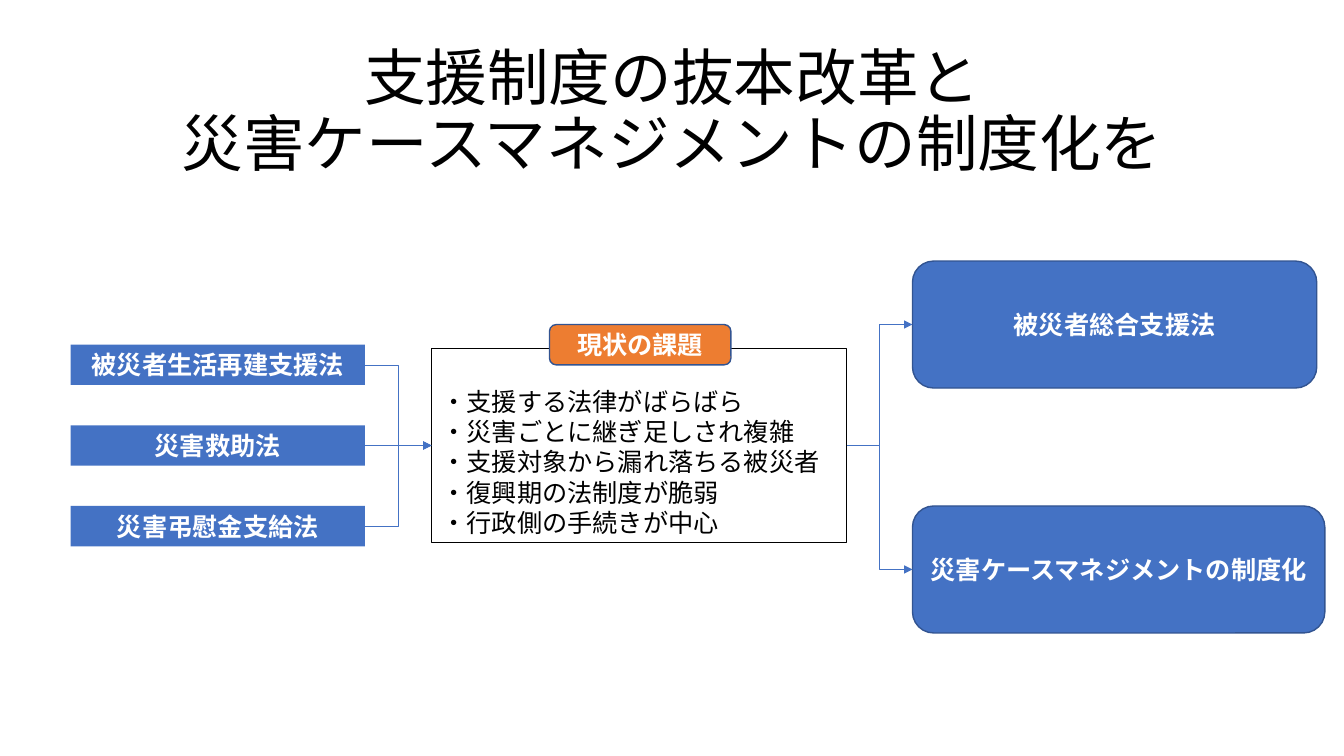
from lxml import etree
from pptx import Presentation
from pptx.dml.color import RGBColor
from pptx.enum.shapes import MSO_CONNECTOR, MSO_SHAPE
from pptx.enum.text import MSO_ANCHOR, MSO_AUTO_SIZE, PP_ALIGN
from pptx.oxml.ns import qn
from pptx.util import Inches, Pt

RECTANGLE = MSO_SHAPE.RECTANGLE
ROUNDED = MSO_SHAPE.ROUNDED_RECTANGLE
ELBOW = MSO_CONNECTOR.ELBOW
MIDDLE = MSO_ANCHOR.MIDDLE
BOTTOM = MSO_ANCHOR.BOTTOM
LEFT = PP_ALIGN.LEFT
CENTER = PP_ALIGN.CENTER
NO_AUTOFIT = MSO_AUTO_SIZE.NONE

FONT = "Noto Sans CJK JP"
BLUE, ORANGE, OUTLINE = "4472C4", "ED7D31", "325491"
BLACK, WHITE = "000000", "FFFFFF"

TITLE = "支援制度の抜本改革と\v災害ケースマネジメントの制度化を"
CURRENT_LAWS = ["被災者生活再建支援法", "災害救助法", "災害弔慰金支給法"]
ISSUES_HEADING = "現状の課題"
ISSUES = [
    "・支援する法律がばらばら",
    "・災害ごとに継ぎ足しされ複雑",
    "・支援対象から漏れ落ちる被災者",
    "・復興期の法制度が脆弱",
    "・行政側の手続きが中心",
]
REFORMS = [("被災者総合支援法", 2.59, 4.01), ("災害ケースマネジメントの制度化", 5.02, 4.09)]


def color(hex_string):
    return RGBColor.from_string(hex_string)


def format_text(text_frame, size, hex_string, bold=False, align=CENTER):
    for paragraph in text_frame.paragraphs:
        paragraph.alignment = align
        for run in paragraph.runs:
            run.font.size = Pt(size)
            run.font.bold = bold
            run.font.name = FONT
            run.font.color.rgb = color(hex_string)
            east_asian = etree.SubElement(run.font._element, qn("a:ea"))
            east_asian.set("typeface", FONT)


def add_box(slide, kind, box, fill=None, line=None, line_width=1):
    shape = slide.shapes.add_shape(kind, *map(Inches, box))
    shape.shadow.inherit = False
    if fill:
        shape.fill.solid()
        shape.fill.fore_color.rgb = color(fill)
    else:
        shape.fill.background()
    if line:
        shape.line.color.rgb = color(line)
        shape.line.width = Pt(line_width)
    else:
        shape.line.fill.background()
    return shape


def add_label(slide, kind, box, text, fill, line=None):
    shape = add_box(slide, kind, box, fill, line)
    text_frame = shape.text_frame
    text_frame.text = text
    text_frame.word_wrap = False
    text_frame.vertical_anchor = MIDDLE
    format_text(text_frame, 18, WHITE, bold=True)
    return shape


def add_arrow(slide, source, source_site, target, target_site):
    connector = slide.shapes.add_connector(ELBOW, 0, 0, 0, 0)
    connector.begin_connect(source, source_site)
    connector.end_connect(target, target_site)
    connector.line.color.rgb = color(BLUE)
    connector.line.width = Pt(0.5)
    etree.SubElement(connector.line._get_or_add_ln(), qn("a:tailEnd"), type="triangle")
    etree.SubElement(connector._element.spPr, qn("a:effectLst"))


def add_title(slide, box):
    title = slide.shapes.title
    title.left, title.top, title.width, title.height = map(Inches, box)
    text_frame = title.text_frame
    text_frame.text = TITLE
    text_frame.word_wrap = True
    text_frame.auto_size = NO_AUTOFIT
    text_frame.vertical_anchor = MIDDLE
    text_frame.paragraphs[0].line_spacing = 0.9
    format_text(text_frame, 44, BLACK)


def add_current_laws(slide, left, top, width, height, pitch):
    return [
        add_label(slide, RECTANGLE, (left, top + row * pitch, width, height), law, BLUE)
        for row, law in enumerate(CURRENT_LAWS)
    ]


def add_issues(slide, left, top, width, height):
    panel = add_box(slide, RECTANGLE, (left, top, width, height), line=BLACK, line_width=0.75)
    text_frame = panel.text_frame
    text_frame.text = "\n".join(ISSUES)
    text_frame.word_wrap = True
    text_frame.vertical_anchor = BOTTOM
    format_text(text_frame, 18, BLACK, align=LEFT)
    heading_box = (left + 1.17, top - 0.24, 1.8, 0.4)
    add_label(slide, ROUNDED, heading_box, ISSUES_HEADING, ORANGE, OUTLINE)
    return panel


def add_reforms(slide, left, height):
    return [
        add_label(slide, ROUNDED, (left, top, width, height), reform, BLUE, OUTLINE)
        for reform, top, width in REFORMS
    ]


def main():
    presentation = Presentation()
    presentation.slide_width = Inches(13.33)
    presentation.slide_height = Inches(7.5)
    slide = presentation.slides.add_slide(presentation.slide_layouts[5])

    add_title(slide, (0.92, 0.4, 11.5, 1.45))
    laws = add_current_laws(slide, 0.7, 3.42, 2.92, 0.4, 0.8)
    issues = add_issues(slide, 4.28, 3.46, 4.12, 1.92)
    reforms = add_reforms(slide, 9.05, 1.26)
    for law in laws:
        add_arrow(slide, law, 3, issues, 1)
    for reform in reforms:
        add_arrow(slide, issues, 3, reform, 1)

    presentation.save("out.pptx")


if __name__ == "__main__":
    main()
